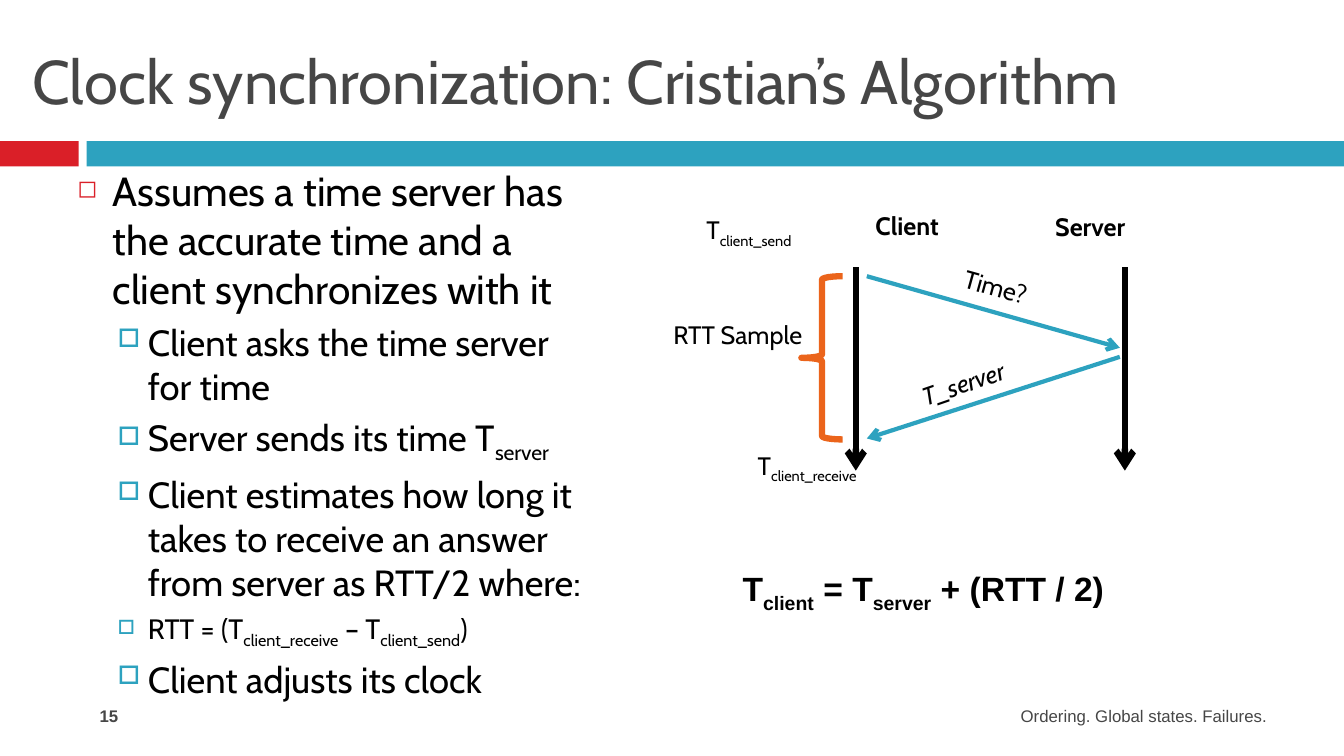
from lxml.etree import SubElement
from pptx import Presentation
from pptx.dml.color import RGBColor
from pptx.enum.shapes import MSO_CONNECTOR as Line, MSO_SHAPE as Shape
from pptx.enum.text import MSO_ANCHOR as Anchor, PP_ALIGN as Align
from pptx.oxml.ns import qn
from pptx.util import Pt

RED = RGBColor(0xDA, 0x1F, 0x28)
TEAL = RGBColor(0x2D, 0xA2, 0xBF)
ORANGE = RGBColor(0xEB, 0x64, 0x1B)
GREY = RGBColor(0x46, 0x46, 0x46)
BLACK = RGBColor(0, 0, 0)

# In each list of parts, every second part is a subscript.
TITLE = ["Clock synchronization: Cristian’s Algorithm"]
POINTS = [  # level, size, parts
    (0, 29, ["Assumes a time server has the accurate time and a client "
             "synchronizes with it"]),
    (1, 26, ["Client asks the time server for time"]),
    (1, 26, ["Server sends its time T", "server"]),
    (1, 26, ["Client estimates how long it takes to receive an answer "
             "from server as RTT/2 where:"]),
    (1, 20, ["RTT = (T", "client_receive", " – T", "client_send", ")"]),
    (1, 26, ["Client adjusts its clock"]),
]
LEVELS = [  # bullet, colour, bullet size %, indent, hang, space before
    ("◻", RED, 60, 25.2, 25.2, 7),
    ("□", TEAL, 70, 50.4, 21.6, 5.5),
]
FORMULA = ["T", "client", " = T", "server", " + (RTT / 2)"]
BARS = [(0, 56.2, RED), (61.9, 898.1, TEAL)]  # left, width, colour
LABELS = [  # box, parts, style
    ((594, 146.9, 108, 36), ["Client"], dict(bold=True)),
    ((722.9, 147.6, 111.6, 36), ["Server"], dict(bold=True)),
    ((631.4, 190.1, 157.7, 36), ["Time?"], dict(turn=15.6)),
    ((625.7, 259.2, 126.7, 36), ["T_server"], dict(turn=-19, italic=True)),
    ((471, 224.6, 112, 36), ["RTT Sample"], {}),
    ((534.2, 318.2, 125.3, 36), ["T", "client_receive"],
     dict(align=Align.LEFT)),
    ((497.5, 149.8, 108, 36), ["T", "client_send"], dict(align=Align.LEFT)),
]
CLIENT, SERVER = 611.3, 803.5
TOP, END = 190.8, 336.2
NEAR, FAR = CLIENT + 7.9, SERVER - 3.6
SENT, HEARD, REPLY, BACK = 197.3, 248.4, 254.9, 313.2
ARROWS = [  # from, to, colour, weight
    (CLIENT, TOP, CLIENT, END, BLACK, 4.5),
    (SERVER, TOP, SERVER, END, BLACK, 4.5),
    (NEAR, SENT, FAR, HEARD, TEAL, 3),
    (FAR, REPLY, NEAR, BACK, TEAL, 3),
]

deck = Presentation()
deck.slide_width, deck.slide_height = Pt(960), Pt(540)
shapes = deck.slides.add_slide(deck.slide_layouts[6]).shapes


def fill_para(para, parts, size, font="Cabin", color=BLACK, bold=False,
              italic=False, align=Align.LEFT):
    para.alignment = align
    for i, part in enumerate(parts):
        run = para.add_run()
        run.text = part
        face = run.font
        face.name, face.size, face.color.rgb = font, Pt(size), color
        face.bold, face.italic = bold, italic
        if i % 2:
            run._r.get_or_add_rPr().set("baseline", "-25000")


def add_text(box, parts, size, turn=0, **style):
    item = shapes.add_textbox(*map(Pt, box))
    item.rotation = turn
    frame = item.text_frame
    frame.word_wrap = True
    fill_para(frame.paragraphs[0], parts, size, **style)
    return frame


def add_bullet(para, level):
    mark, color, scale, left, hang, gap = LEVELS[level]
    para.level, para.space_before = level, Pt(gap)
    props = para._p.get_or_add_pPr()
    props.set("marL", str(Pt(left)))
    props.set("indent", str(-Pt(hang)))
    tint = SubElement(props, qn("a:buClr"))
    SubElement(tint, qn("a:srgbClr"), val=str(color))
    SubElement(props, qn("a:buSzPct"), val=str(scale * 1000))
    SubElement(props, qn("a:buChar"), char=mark)


def add_arrow(x1, y1, x2, y2, color, weight):
    item = shapes.add_connector(Line.STRAIGHT, *map(Pt, (x1, y1, x2, y2)))
    item.line.color.rgb, item.line.width = color, Pt(weight)
    SubElement(item.line._get_or_add_ln(), qn("a:tailEnd"), type="arrow")
    SubElement(item._element.spPr, qn("a:effectLst"))


for left, width, color in BARS:
    bar = shapes.add_shape(Shape.RECTANGLE, Pt(left), Pt(100.8),
                           Pt(width), Pt(18))
    bar.shadow.inherit = False
    bar.fill.solid()
    bar.fill.fore_color.rgb = color
    bar.line.fill.background()

title = add_text((15.8, 18, 928.1, 77.8), TITLE, 44, color=GREY)
title.vertical_anchor = Anchor.MIDDLE

body = shapes.add_textbox(Pt(48.2), Pt(115.2), Pt(388.1), Pt(388.8)).text_frame
body.word_wrap = True
for i, (level, size, parts) in enumerate(POINTS):
    para = body.add_paragraph() if i else body.paragraphs[0]
    fill_para(para, parts, size)
    add_bullet(para, level)

add_text((544.3, 500.4, 367.9, 28.8), ["Ordering. Global states. Failures."],
         12, font="Arial", color=GREY, align=Align.RIGHT)
add_text((64.1, 500.4, 208.1, 28.8), ["15"], 12, font="Arial", color=GREY,
         bold=True)
formula = add_text((523.4, 392.4, 297.4, 42.5), FORMULA, 24, font="Arial",
                   bold=True)
formula.paragraphs[0].line_spacing = 1.3

for arrow in ARROWS:
    add_arrow(*arrow)

brace = shapes.add_shape(Shape.LEFT_BRACE, Pt(572.4), Pt(SENT),
                         Pt(29.5), Pt(116.6))
brace.shadow.inherit = False
brace.fill.background()
brace.line.color.rgb, brace.line.width = ORANGE, Pt(4.5)

for box, parts, style in LABELS:
    add_text(box, parts, 18, **{"align": Align.CENTER, **style})

deck.save("out.pptx")
